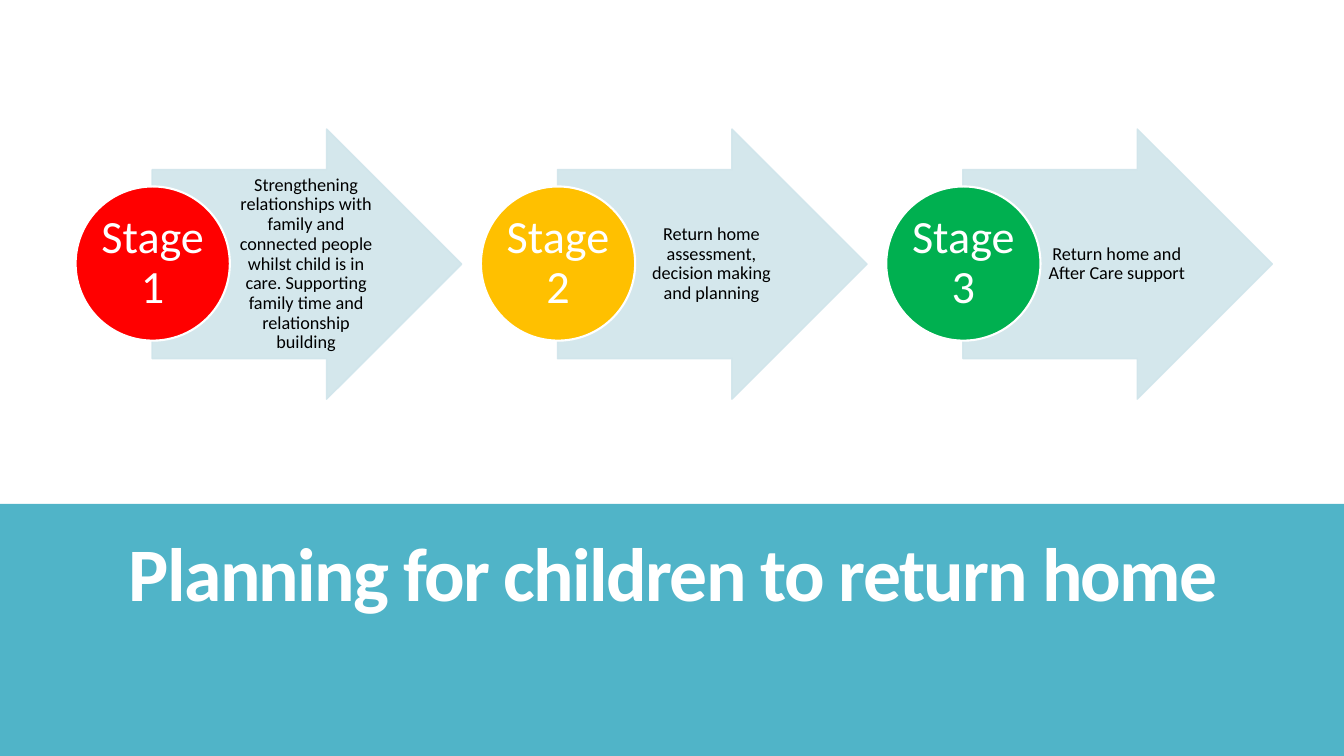
from lxml.etree import SubElement
from pptx import Presentation
from pptx.dml.color import RGBColor
from pptx.enum.shapes import MSO_SHAPE
from pptx.enum.text import MSO_ANCHOR, MSO_AUTO_SIZE, PP_ALIGN
from pptx.oxml.ns import qn
from pptx.util import Inches, Pt

STAGES = [
    ("Stage 1", "FF0000",
     "Strengthening relationships with family and connected people whilst child "
     "is in care. Supporting family time and relationship building"),
    ("Stage 2", "FFC000", "Return home assessment, decision making and planning"),
    ("Stage 3", "00B050", "Return home and After Care support"),
]
STAGE_LEFT = 0.75
STAGE_STEP = 4.02


def colour(value):
    return RGBColor.from_string(value)


def write(shape, text, size, color, bold=False, line_spacing=0.9,
          insets=(0.02, 0.02, 0.02, 0.02), tracking=None):
    frame = shape.text_frame
    frame.word_wrap = True
    frame.auto_size = MSO_AUTO_SIZE.NONE
    frame.vertical_anchor = MSO_ANCHOR.MIDDLE
    (frame.margin_left, frame.margin_top,
     frame.margin_right, frame.margin_bottom) = map(Inches, insets)
    para = frame.paragraphs[0]
    para.alignment = PP_ALIGN.CENTER
    para.line_spacing = line_spacing
    span = para.add_run()
    span.text = text
    span.font.name = "Calibri"
    span.font.size = Pt(size)
    span.font.bold = bold
    span.font.color.rgb = colour(color)
    if tracking is not None:
        span.font._element.set("spc", str(round(tracking * 100)))


class StagePage:
    band_color = "50B4C8"
    arrow_color = "D0E5EB"
    light = "FFFFFF"
    dark = "000000"

    def __init__(self, deck):
        self.page = deck.slides.add_slide(deck.slide_layouts[5])

    def shape(self, kind, left, top, width, height, fill, line=None, line_width=1):
        shape = self.page.shapes.add_shape(
            kind, Inches(left), Inches(top), Inches(width), Inches(height))
        shape.shadow.inherit = False
        shape.fill.solid()
        shape.fill.fore_color.rgb = colour(fill)
        if line:
            shape.line.color.rgb = colour(line)
            shape.line.width = Pt(line_width)
        else:
            shape.line.fill.background()
        return shape

    def title(self, text):
        band = self.shape(MSO_SHAPE.RECTANGLE, 0, 5, 13.33, 2.5, self.band_color)
        title = self.page.shapes.title
        title.element.addprevious(band.element)
        title.left, title.top = Inches(0.72), Inches(5.22)
        title.width, title.height = Inches(11.78), Inches(1.81)
        write(title, text, 54, self.light, bold=True, line_spacing=0.85,
              insets=(0.24, 0.05, 0.1, 0.83), tracking=-1.2)

    def arrow(self, left):
        arrow = self.shape(MSO_SHAPE.RIGHT_ARROW, left, 1.28, 3.07, 2.68,
                           self.arrow_color, self.arrow_color)
        arrow.adjustments[0] = 0.7
        arrow.adjustments[1] = 0.5
        for color in arrow.element.spPr.iter(qn("a:srgbClr")):
            SubElement(color, qn("a:alpha"), val="90000")

    def description(self, left, text):
        box = self.page.shapes.add_textbox(
            Inches(left), Inches(1.68), Inches(1.49), Inches(1.88))
        write(box, text, 13, self.dark, insets=(0.04, 0.01, 0.02, 0.01))

    def circle(self, left, label, fill):
        circle = self.shape(MSO_SHAPE.OVAL, left, 1.85, 1.53, 1.53,
                            fill, self.light, 1.5)
        write(circle, label, 33, self.light)

    def stage(self, left, label, fill, text):
        self.arrow(left + 0.76)
        self.description(left + 1.53, text)
        self.circle(left, label, fill)


def main():
    deck = Presentation()
    deck.slide_width, deck.slide_height = Inches(13.33), Inches(7.5)
    page = StagePage(deck)
    page.title("Planning for children to return home")
    for index, (label, fill, text) in enumerate(STAGES):
        page.stage(STAGE_LEFT + index * STAGE_STEP, label, fill, text)
    deck.save("out.pptx")


if __name__ == "__main__":
    main()
